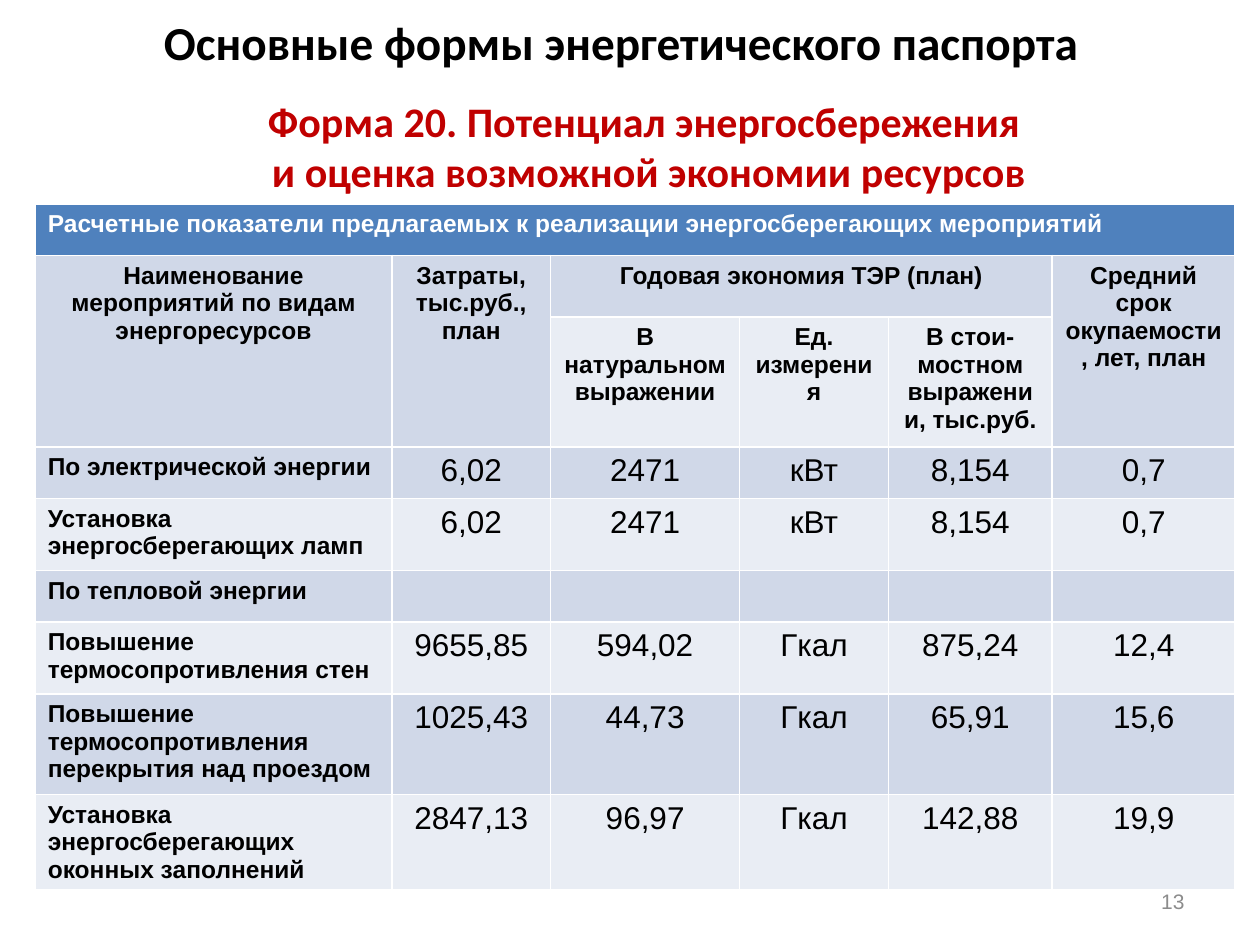
from pptx import Presentation
from pptx.dml.color import RGBColor
from pptx.enum.text import MSO_ANCHOR, PP_ALIGN
from pptx.util import Cm, Pt

BLACK = RGBColor(0x00, 0x00, 0x00)
WHITE = RGBColor(0xFF, 0xFF, 0xFF)
RED = RGBColor(0xC0, 0x00, 0x00)
GRAY = RGBColor(0x8C, 0x8C, 0x8C)
HEADER_BLUE = RGBColor(0x4F, 0x81, 0xBD)
BAND_DARK = RGBColor(0xD0, 0xD8, 0xE8)
BAND_LIGHT = RGBColor(0xE9, 0xED, 0xF4)


def write(frame, text, size, color, align, font="Arial", bold=False):
    """Fill a text frame and give all its paragraphs one format."""
    frame.text = text
    for paragraph in frame.paragraphs:
        paragraph.alignment = align
        paragraph.font.name = font
        paragraph.font.size = Pt(size)
        paragraph.font.bold = bold
        paragraph.font.color.rgb = color


presentation = Presentation()
presentation.slide_width = Cm(25.4)
presentation.slide_height = Cm(19.05)
slide = presentation.slides.add_slide(presentation.slide_layouts[5])

form_title = slide.shapes.title
form_title.left, form_title.top = Cm(1.27), Cm(1.93)
form_title.width, form_title.height = Cm(23.62), Cm(2.01)
form_title.text_frame.vertical_anchor = MSO_ANCHOR.MIDDLE
write(form_title.text_frame,
      "Форма 20. Потенциал энергосбережения \vи оценка возможной экономии ресурсов",
      24, RED, PP_ALIGN.CENTER, "Calibri", True)

# Savings table: three heading rows, then one row per measure
column_widths = [7.19, 3.2, 3.81, 3.0, 3.3, 3.69]
row_heights = [1.04, 1.24, 2.62, 1.04, 1.45, 1.04, 1.45, 2.03, 1.9]
headings = [
    ["Расчетные показатели предлагаемых к реализации энергосберегающих мероприятий"],
    ["Наименование мероприятий по видам энергоресурсов", "Затраты, тыс.руб., план",
     "Годовая экономия ТЭР (план)", "", "", "Средний срок окупаемости, лет, план"],
    ["", "", "В натуральном выражении", "Ед.\nизмерения",
     "В стои-мостном выражении, тыс.руб.", ""],
]
measures = [
    ["По электрической энергии", "6,02", "2471", "кВт", "8,154", "0,7"],
    ["Установка энергосберегающих ламп", "6,02", "2471", "кВт", "8,154", "0,7"],
    ["По тепловой энергии", "", "", "", "", ""],
    ["Повышение термосопротивления стен", "9655,85", "594,02", "Гкал", "875,24", "12,4"],
    ["Повышение термосопротивления перекрытия над проездом",
     "1025,43", "44,73", "Гкал", "65,91", "15,6"],
    ["Установка энергосберегающих оконных заполнений",
     "2847,13", "96,97", "Гкал", "142,88", "19,9"],
]
merges = [((0, 0), (0, 5)), ((1, 0), (2, 0)), ((1, 1), (2, 1)),
          ((1, 2), (1, 4)), ((1, 5), (2, 5))]

savings = slide.shapes.add_table(
    len(row_heights), len(column_widths), Cm(0.71), Cm(4.11),
    Cm(sum(column_widths)), Cm(sum(row_heights))).table
for column, width in zip(savings.columns, column_widths):
    column.width = Cm(width)
for row, height in zip(savings.rows, row_heights):
    row.height = Cm(height)
for first, last in merges:
    savings.cell(*first).merge(savings.cell(*last))

for r, row in enumerate(savings.rows):
    band = HEADER_BLUE if r == 0 else BAND_DARK if r % 2 else BAND_LIGHT
    for cell in row.cells:
        cell.fill.solid()
        cell.fill.fore_color.rgb = band

for r, texts in enumerate(headings + measures):
    for c, text in enumerate(texts):
        cell = savings.cell(r, c)
        if cell.is_spanned:
            continue
        is_heading = r < len(headings)
        is_label = is_heading or c == 0
        left_aligned = r == 0 or (c == 0 and not is_heading)
        write(cell.text_frame, text, 14 if is_label else 18,
              WHITE if r == 0 else BLACK,
              PP_ALIGN.LEFT if left_aligned else PP_ALIGN.CENTER, bold=is_label)

# Page number and section heading
captions = [
    ((18.21, 17.65, 5.92, 1.02), ("13", 12, GRAY, PP_ALIGN.RIGHT)),
    ((1.09, 0.13, 22.86, 1.4),
     ("Основные формы энергетического паспорта", 27, BLACK, PP_ALIGN.CENTER,
      "Calibri", True)),
]
for place, content in captions:
    frame = slide.shapes.add_textbox(*map(Cm, place)).text_frame
    frame.word_wrap = True
    frame.vertical_anchor = MSO_ANCHOR.MIDDLE
    write(frame, *content)

presentation.save("out.pptx")
